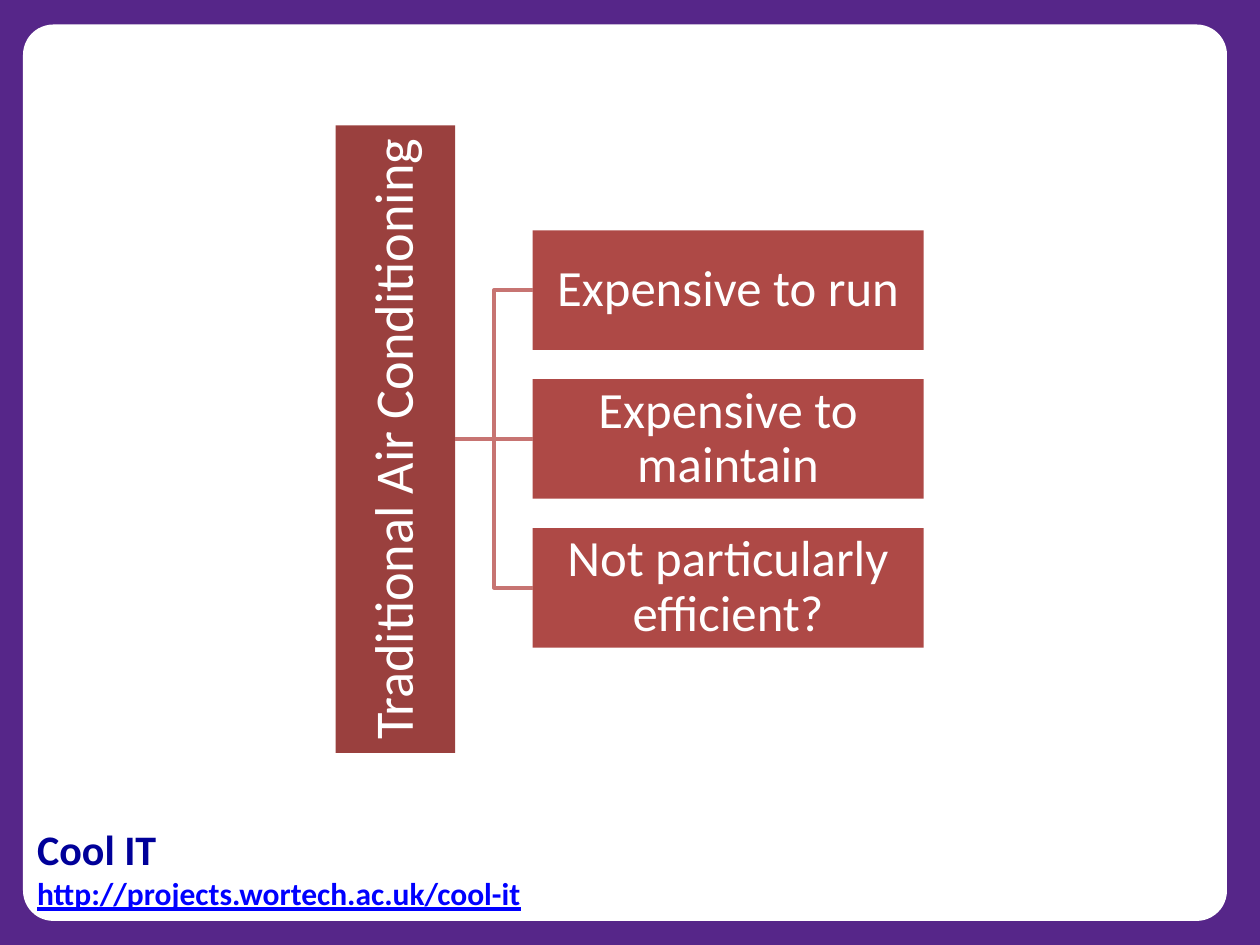
from lxml import etree
from pptx import Presentation
from pptx.dml.color import RGBColor
from pptx.enum.shapes import MSO_CONNECTOR, MSO_SHAPE
from pptx.enum.text import MSO_ANCHOR, PP_ALIGN
from pptx.oxml.ns import qn
from pptx.util import Cm, Pt

RECT = MSO_SHAPE.RECTANGLE
ROUND = MSO_SHAPE.ROUNDED_RECTANGLE
ELBOW = MSO_CONNECTOR.ELBOW
LINE = MSO_CONNECTOR.STRAIGHT
MIDDLE = MSO_ANCHOR.MIDDLE
CENTER = PP_ALIGN.CENTER
LEFT_SIDE = 1


def color(code):
    return RGBColor.from_string(code)


class Page:
    font = "Calibri"
    white = "FFFFFF"
    wire = "C77472"
    inset = Cm(0.05)

    def __init__(self, slide):
        self.slide = slide

    def back(self, code):
        fill = self.slide.background.fill
        fill.solid()
        fill.fore_color.rgb = color(code)

    def shape(self, kind, x, y, w, h, code):
        item = self.slide.shapes.add_shape(kind, Cm(x), Cm(y), Cm(w), Cm(h))
        item.shadow.inherit = False
        item.fill.solid()
        item.fill.fore_color.rgb = color(code)
        item.line.fill.background()
        return item

    def panel(self, x, y, w, h, round_by):
        item = self.shape(ROUND, x, y, w, h, self.white)
        item.adjustments[0] = round_by
        item.line.color.rgb = color(self.white)
        item.line.width = Pt(2)

    def style(self, para, size, code, bold=False, under=False):
        for run in para.runs:
            font = run.font
            font.name, font.size = self.font, Pt(size)
            font.bold, font.underline = bold, under
            font.color.rgb = color(code)

    def box(self, text, x, y, w, h, code, size, turn=0):
        item = self.shape(RECT, x, y, w, h, code)
        item.rotation = turn
        frame = item.text_frame
        frame.text = text
        frame.word_wrap = True
        frame.vertical_anchor = MIDDLE
        frame.margin_left = frame.margin_right = self.inset
        frame.margin_top = frame.margin_bottom = self.inset
        para = frame.paragraphs[0]
        para.alignment = CENTER
        para.line_spacing = 0.9
        self.style(para, size, self.white)
        return item

    def label(self, text, x, y, w, h, size, code, under=False):
        item = self.slide.shapes.add_textbox(Cm(x), Cm(y), Cm(w), Cm(h))
        frame = item.text_frame
        frame.text = text
        frame.word_wrap = True
        self.style(frame.paragraphs[0], size, code, True, under)

    def link(self, kind, x, y, box):
        wire = self.slide.shapes.add_connector(kind, Cm(x), Cm(y), box.left, box.top)
        wire.end_connect(box, LEFT_SIDE)
        wire.line.color.rgb = color(self.wire)
        wire.line.width = Pt(2)
        etree.SubElement(wire._element.spPr, qn("a:effectLst"))


def main():
    deck = Presentation()
    deck.slide_width, deck.slide_height = Cm(25.4), Cm(19.05)
    page = Page(deck.slides.add_slide(deck.slide_layouts[6]))

    # Frame and footer
    page.back("562689")
    page.panel(0.5, 0.53, 24.2, 18, 0.032)
    page.label("Cool IT", 0.5, 16.48, 4, 1.27, 24, "000099")
    page.label("http://projects.wortech.ac.uk/cool-it", 0.5, 17.5, 12.7, 1.02,
               18, "0000FF", under=True)

    # Root bar, turned to read upwards
    mid_x, mid_y = 7.97, 8.85
    long, thick = 12.65, 2.41
    page.box("Traditional Air Conditioning", mid_x - long / 2, mid_y - thick / 2,
             long, thick, "9A403E", 31, turn=270)

    # Branches, evenly spaced about the middle of the bar
    step = 3
    items = ["Expensive to run", "Expensive to maintain", "Not particularly efficient?"]
    for row, text in enumerate(items, start=-1):
        top = mid_y + row * step - thick / 2
        box = page.box(text, 10.74, top, 7.88, thick, "AE4946", 29)
        page.link(ELBOW if row else LINE, mid_x + thick / 2, mid_y, box)

    deck.save("out.pptx")


if __name__ == "__main__":
    main()
